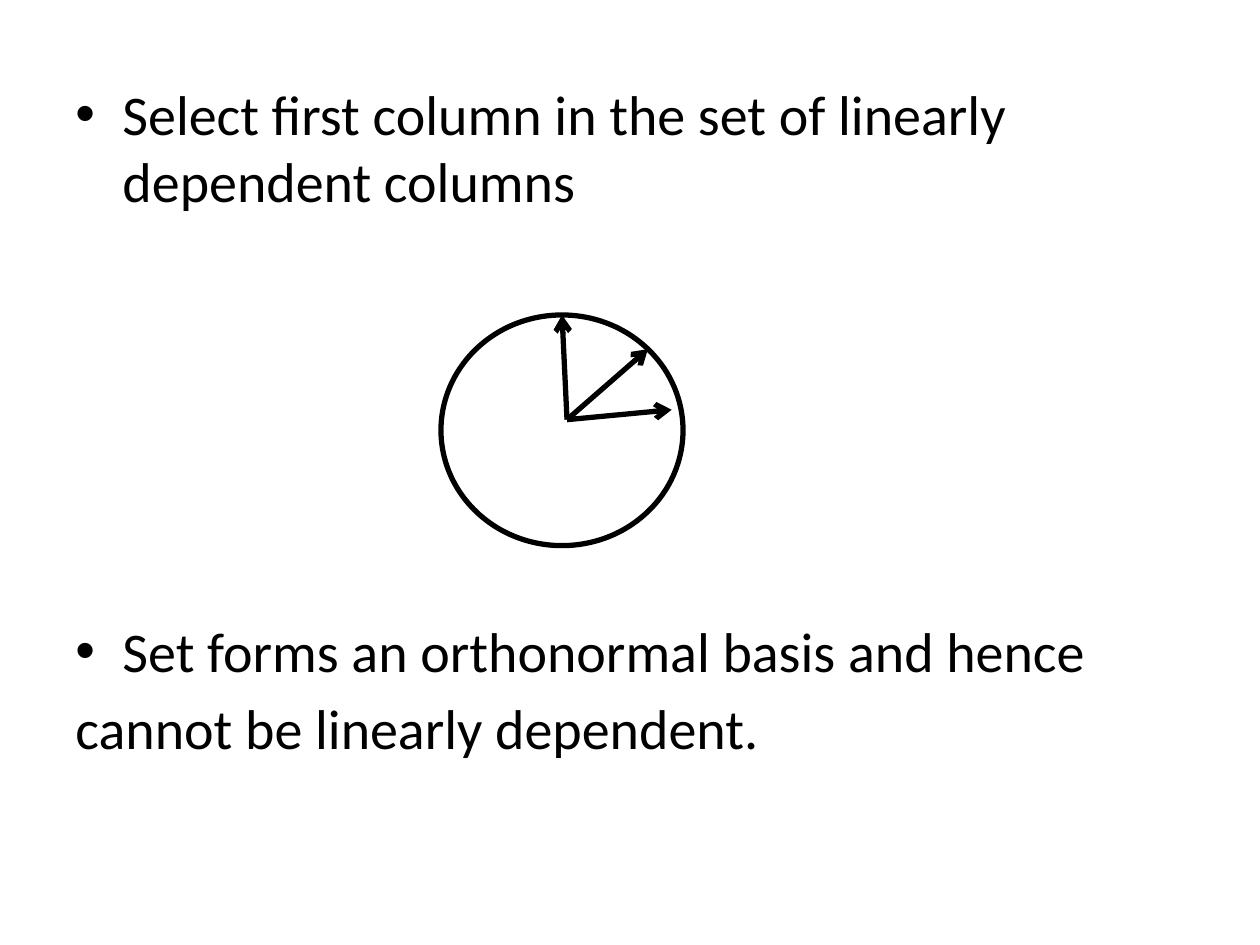
from pptx import Presentation
from pptx.dml.color import RGBColor
from pptx.enum.shapes import MSO_CONNECTOR, MSO_SHAPE
from pptx.oxml.ns import qn
from pptx.util import Cm, Pt
from lxml.etree import SubElement

BLACK = RGBColor(0, 0, 0)


def add_text(p, text, font="Calibri", size=32, color=BLACK, before=6, bullet=False, indent=0.95):
    p.space_before = Pt(before)
    r = p.add_run()
    r.text = text
    r.font.name, r.font.size = font, Pt(size)
    r.font.color.rgb = color
    pPr = p._p.get_or_add_pPr()
    pPr.set("marL", str(Cm(indent)))
    pPr.set("indent", str(-Cm(indent)))
    if bullet:
        SubElement(pPr, qn("a:buFont"), typeface="Arial")
        SubElement(pPr, qn("a:buChar"), char="•")
    else:
        SubElement(pPr, qn("a:buNone"))


class SlideBuilder:
    """Draws text, circles and arrows on one slide in a shared style."""

    def __init__(self, s, color=BLACK, width=3):
        self.s, self.color, self.width = s, color, width

    def outline(self, sp):
        sp.line.color.rgb = self.color
        sp.line.width = Pt(self.width)

    def body(self, x, y, w, h, paragraphs):
        tf = self.s.shapes.add_textbox(Cm(x), Cm(y), Cm(w), Cm(h)).text_frame
        tf.word_wrap = True
        for i, (text, style) in enumerate(paragraphs):
            p = tf.add_paragraph() if i else tf.paragraphs[0]
            add_text(p, text, color=self.color, **style)

    def circle(self, x, y, w, h):
        sp = self.s.shapes.add_shape(MSO_SHAPE.OVAL, Cm(x), Cm(y), Cm(w), Cm(h))
        sp.shadow.inherit = False
        sp.fill.background()
        self.outline(sp)
        return sp

    def arrow(self, start, end):
        sp = self.s.shapes.add_connector(MSO_CONNECTOR.STRAIGHT, *map(Cm, start + end))
        self.outline(sp)
        SubElement(sp.line._get_or_add_ln(), qn("a:tailEnd"), type="arrow")
        SubElement(sp._element.spPr, qn("a:effectLst"))
        return sp


def main():
    prs = Presentation()
    prs.slide_width, prs.slide_height = Cm(25.4), Cm(19.05)
    slide = SlideBuilder(prs.slides.add_slide(prs.slide_layouts[6]))

    slide.body(1.27, 1.47, 22.86, 15.54, [
        ("Select first column in the set of linearly dependent columns", {"bullet": True}),
        ("Set forms an orthonormal basis and hence", {"bullet": True, "before": 230}),
        ("cannot be linearly dependent.", {}),
    ])

    unit_circle = slide.circle(8.89, 6.35, 4.88, 4.65)
    origin = (11.43, 8.46)
    tips = [(11.33, 6.35), (13.54, 8.26), (13.06, 7.04)]
    vectors = [slide.arrow(origin, tip) for tip in tips]
    vectors[0].end_connect(unit_circle, 0)

    prs.save("out.pptx")


if __name__ == "__main__":
    main()
